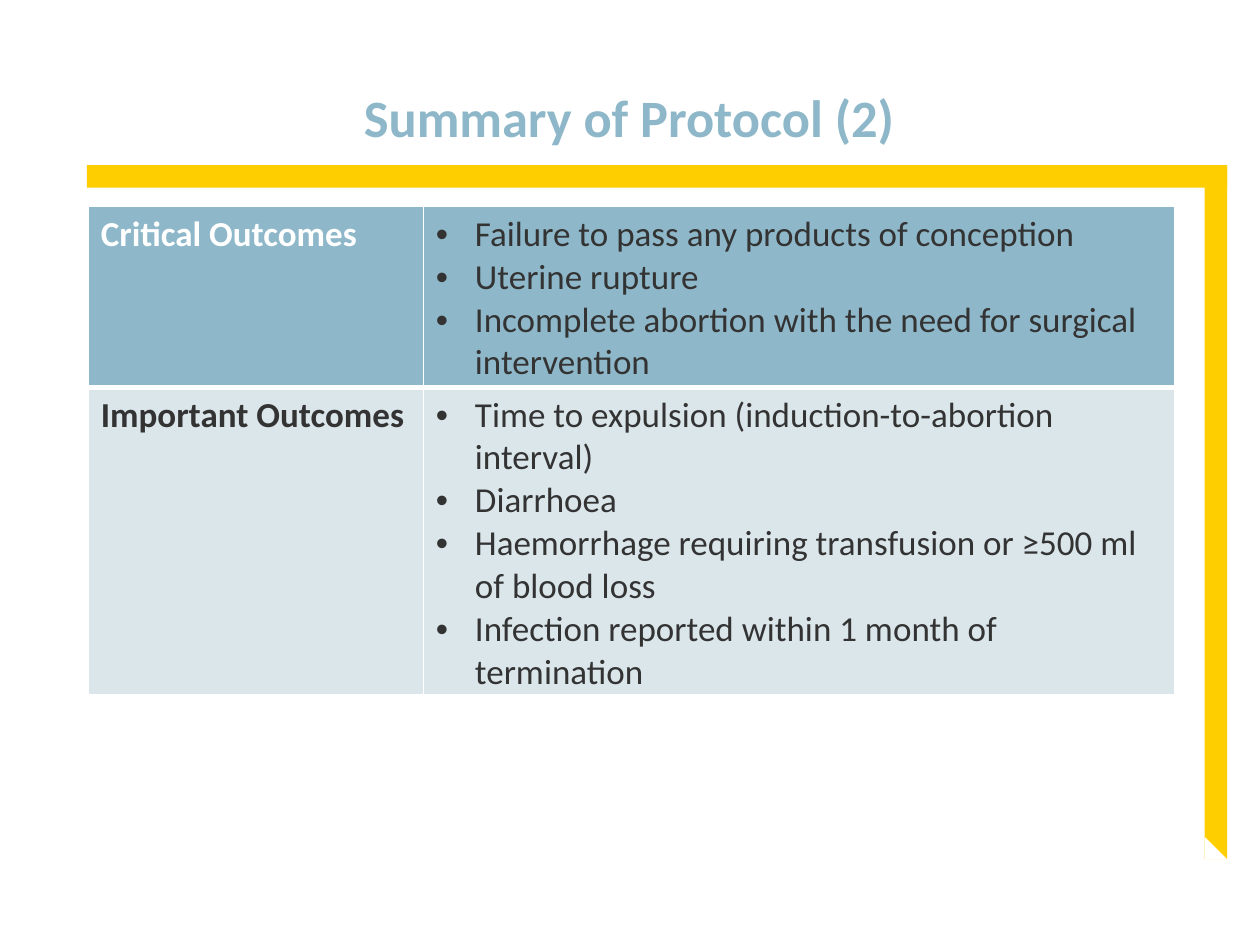
"""Build the protocol summary slide with its outcomes table."""
from dataclasses import dataclass
from typing import Any

from lxml import etree
from pptx import Presentation
from pptx import util as u
from pptx.dml import color
from pptx.enum import shapes, text
from pptx.oxml import ns

BLUE, PALE, YELLOW = "8EB8C9", "DBE6EB", "FFCE00"
WHITE, INK = "FFFFFF", "333333"
FRAME_TOP, FRAME_RIGHT, FRAME_WIDTH = 1.31, 9.74, 0.18
POST_HEIGHT = 5.51
COLUMN_WIDTHS = (2.66, 5.96)


@dataclass(frozen=True)
class FramePart:
    preset: Any
    left: float
    top: float
    width: float
    height: float
    fill: str


@dataclass(frozen=True)
class OutcomeGroup:
    heading: str
    outcomes: tuple[str, ...]
    height: float
    fill: str
    heading_color: str
    borders: dict[str, int]


POST_LEFT = FRAME_RIGHT - FRAME_WIDTH
FRAME = (
    FramePart(shapes.MSO_SHAPE.RECTANGLE, 0.69, FRAME_TOP, FRAME_RIGHT - 0.69, FRAME_WIDTH, YELLOW),
    FramePart(shapes.MSO_SHAPE.RECTANGLE, POST_LEFT, FRAME_TOP, FRAME_WIDTH, POST_HEIGHT, YELLOW),
    FramePart(shapes.MSO_SHAPE.ISOSCELES_TRIANGLE, POST_LEFT, FRAME_TOP + POST_HEIGHT - FRAME_WIDTH,
              FRAME_WIDTH, FRAME_WIDTH, WHITE),
)
GROUPS = (
    OutcomeGroup(
        "Critical Outcomes",
        ("Failure to pass any products of conception",
         "Uterine rupture",
         "Incomplete abortion with the need for surgical intervention"),
        1.43, BLUE, WHITE, {"L": 1, "R": 1, "T": 1, "B": 3}),
    OutcomeGroup(
        "Important Outcomes",
        ("Time to expulsion (induction-to-abortion interval)",
         "Diarrhoea",
         "Haemorrhage requiring transfusion or ≥500 ml of blood loss",
         "Infection reported within 1 month of termination"),
        2.44, PALE, INK, {"L": 1, "R": 1, "T": 3, "B": 1}),
)


def rgb(value: str) -> color.RGBColor:
    """Turn a hex string into a colour."""
    return color.RGBColor.from_string(value)


def apply_format(target: Any, values: dict[str, Any]) -> None:
    """Set each named attribute on the target."""
    for name, value in values.items():
        setattr(target, name, value)


def style_font(font: Any, size: int, bold: bool, ink: str) -> None:
    """Set the typeface, size, weight and colour of a font."""
    apply_format(font, {"name": "Calibri", "size": u.Pt(size), "bold": bold})
    font.color.rgb = rgb(ink)


def draw_frame_part(slide: Any, part: FramePart) -> None:
    """Draw one flat piece of the frame."""
    box = map(u.Inches, (part.left, part.top, part.width, part.height))
    piece = slide.shapes.add_shape(part.preset, *box)
    piece.shadow.inherit = False
    piece.fill.solid()
    piece.fill.fore_color.rgb = rgb(part.fill)
    piece.line.fill.background()
    if part.preset == shapes.MSO_SHAPE.ISOSCELES_TRIANGLE:
        piece.adjustments[0] = 0


def draw_title(slide: Any, wording: str) -> None:
    """Write the heading above the frame."""
    title = slide.shapes.add_textbox(*map(u.Inches, (2.53, 0.19, 7.17, 1.04)))
    apply_format(title.text_frame, {"word_wrap": True, "vertical_anchor": text.MSO_ANCHOR.BOTTOM})
    heading = title.text_frame.paragraphs[0]
    heading.text = wording
    heading.line_spacing = 0.9
    heading._p.get_or_add_pPr().set("marL", str(u.Inches(0.26)))
    style_font(heading.font, 30, True, BLUE)


def add_bullet(paragraph: Any) -> None:
    """Give a paragraph a hanging round bullet."""
    properties = paragraph._p.get_or_add_pPr()
    properties.set("marL", str(u.Inches(0.31)))
    properties.set("indent", str(u.Inches(-0.31)))
    etree.SubElement(properties, ns.qn("a:buFont"), typeface="Arial")
    etree.SubElement(properties, ns.qn("a:buChar"), char="•")


def style_cell(cell: Any, group: OutcomeGroup) -> None:
    """Set the borders and fill of a cell."""
    properties = cell._tc.get_or_add_tcPr()
    for side, points in group.borders.items():
        edge = etree.SubElement(properties, ns.qn(f"a:ln{side}"), w=str(u.Pt(points)))
        paint = etree.SubElement(edge, ns.qn("a:solidFill"))
        etree.SubElement(paint, ns.qn("a:srgbClr"), val=WHITE)
    cell.fill.solid()
    cell.fill.fore_color.rgb = rgb(group.fill)


def draw_outcomes(slide: Any, groups: tuple[OutcomeGroup, ...]) -> None:
    """Draw the table with one row per outcome group."""
    size = (sum(COLUMN_WIDTHS), sum(group.height for group in groups))
    table = slide.shapes.add_table(
        len(groups), len(COLUMN_WIDTHS), *map(u.Inches, (0.7, 1.64, *size))).table
    apply_format(table, {"first_row": False, "horz_banding": False})
    for column, width in zip(table.columns, COLUMN_WIDTHS):
        column.width = u.Inches(width)
    for row, group in zip(table.rows, groups):
        row.height = u.Inches(group.height)
        heading, outcomes = row.cells
        heading.text = group.heading
        style_font(heading.text_frame.paragraphs[0].font, 20, True, group.heading_color)
        outcomes.text = "\n".join(group.outcomes)
        for paragraph in outcomes.text_frame.paragraphs:
            add_bullet(paragraph)
            style_font(paragraph.font, 20, False, INK)
        for cell in (heading, outcomes):
            style_cell(cell, group)


def main() -> None:
    """Assemble and save the slide."""
    deck = Presentation()
    apply_format(deck, {"slide_width": u.Inches(10), "slide_height": u.Inches(7.5)})
    slide = deck.slides.add_slide(deck.slide_layouts[6])
    for part in FRAME:
        draw_frame_part(slide, part)
    draw_title(slide, "Summary of Protocol (2)")
    draw_outcomes(slide, GROUPS)
    deck.save("out.pptx")


if __name__ == "__main__":
    main()
